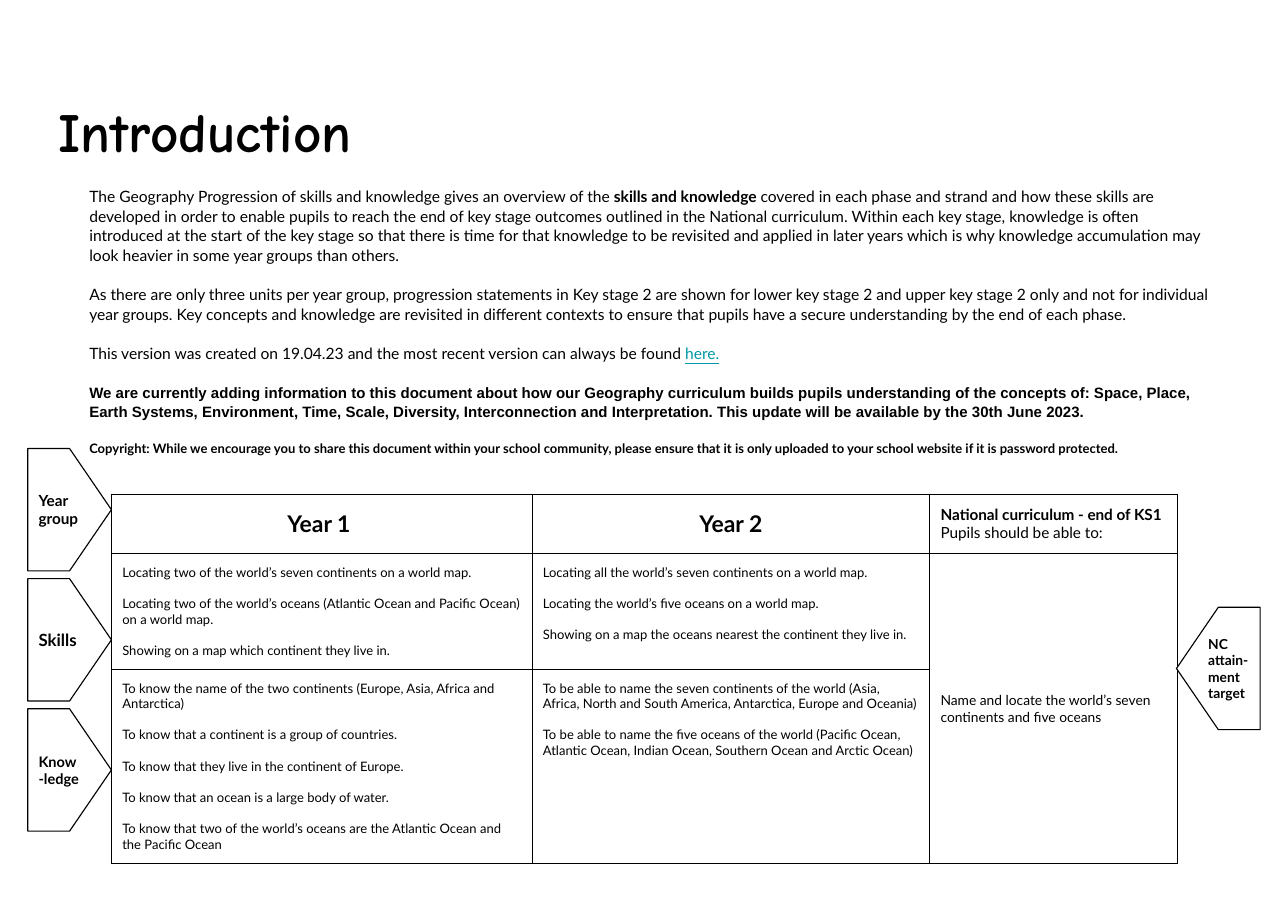
"""Builds the introduction slide of a geography skills and knowledge progression."""
from lxml import etree
from pptx import Presentation
from pptx.dml.color import RGBColor
from pptx.enum.shapes import MSO_SHAPE
from pptx.enum.text import MSO_ANCHOR, MSO_AUTO_SIZE, PP_ALIGN
from pptx.oxml.ns import qn
from pptx.util import Cm, Pt

PENTAGON = MSO_SHAPE.PENTAGON
TOP, MIDDLE = MSO_ANCHOR.TOP, MSO_ANCHOR.MIDDLE
LEFT, CENTER = PP_ALIGN.LEFT, PP_ALIGN.CENTER
NO_FIT = MSO_AUTO_SIZE.NONE
BLACK, WHITE, TEAL = "000000", "FFFFFF", "0097A7"
LINE_WIDTH = Pt(0.75)
LABEL_TOP, LABEL_PITCH = 10.34, 3
HEADER_SIZE, STATEMENT_SIZE, STATEMENT_GAP = 15, 8.5, 10.2

COLUMN_WIDTHS = [9.7, 9.17, 5.72]
ROW_HEIGHTS = [1.37, 2.67, 4.48]
YEARS = ["Year 1 ", "Year 2"]
SKILLS = [
    ["Locating two of the world’s seven continents on a world map.",
     "Locating two of the world’s oceans (Atlantic Ocean and Pacific Ocean) on a world map.",
     "Showing on a map which continent they live in."],
    ["Locating all the world’s seven continents on a world map.",
     "Locating the world’s five oceans on a world map.",
     "Showing on a map the oceans nearest the continent they live in."],
]
KNOWLEDGE = [
    ["To know the name of the two continents (Europe, Asia, Africa and Antarctica)",
     "To know that a continent is a group of countries.",
     "To know that they live in the continent of Europe.",
     "To know that an ocean is a large body of water.",
     "To know that two of the world’s oceans are the Atlantic Ocean and the Pacific Ocean"],
    ["To be able to name the seven continents of the world (Asia, Africa, North and South "
     "America, Antarctica, Europe and Oceania)",
     "To be able to name the five oceans of the world (Pacific Ocean, Atlantic Ocean, "
     "Indian Ocean, Southern Ocean and Arctic Ocean)"],
]
ROW_LABELS = [("Year group", 10), ("Skills", 11), ("Know-ledge", 9.5)]


def rgb(value):
    """Turn a hex string into a colour."""
    return RGBColor.from_string(value)


class SlideBuilder:
    """Holds the text style and the current slide."""

    def __init__(self, slide, font="Lato", color=BLACK):
        """Keep the slide and its default font and colour."""
        self.slide, self.font, self.color = slide, font, color

    def frame(self, frame, inset, anchor=TOP):
        """Prepare a text frame with equal insets."""
        frame.word_wrap, frame.auto_size = True, NO_FIT
        frame.vertical_anchor = anchor
        frame.margin_left = frame.margin_right = Cm(inset)
        frame.margin_top = frame.margin_bottom = Cm(inset)
        return frame

    def paragraph(self, frame, text, size, bold=False, font=None, align=LEFT, gap=0, spacing=1):
        """Write the next paragraph, with a gap above all but the first."""
        first = not frame.text
        paragraph = frame.paragraphs[0] if first else frame.add_paragraph()
        paragraph.text = text
        paragraph.alignment = align
        paragraph.line_spacing = spacing
        paragraph.space_before = Pt(0 if first else gap)
        paragraph.font.name = font or self.font
        paragraph.font.size = Pt(size)
        paragraph.font.bold = bold
        paragraph.font.color.rgb = rgb(self.color)
        return paragraph

    def title(self, text, left, top, width, height):
        """Place the title placeholder."""
        title = self.slide.shapes.title
        title.left, title.top, title.width, title.height = map(Cm, (left, top, width, height))
        self.paragraph(self.frame(title.text_frame, 0.33, MIDDLE), text, 36, True, "Comic Neue")

    def text_box(self, left, top, width, height):
        """Add a wrapping text box and return its frame."""
        box = self.slide.shapes.add_textbox(*map(Cm, (left, top, width, height)))
        return self.frame(box.text_frame, 0.33)

    def label(self, text, size, left, top, flipped=False):
        """Add a pentagon label that points at the table."""
        label = self.slide.shapes.add_shape(PENTAGON, *map(Cm, (left, top, 1.93, 2.82)))
        label.shadow.inherit = False
        label.fill.solid()
        label.fill.fore_color.rgb = rgb(WHITE)
        label.line.color.rgb = rgb(BLACK)
        label.line.width = LINE_WIDTH
        if flipped:
            label.element.spPr.get_or_add_xfrm().set("flipH", "1")
        self.paragraph(self.frame(label.text_frame, 0.25, MIDDLE), text, size, True)

    def table(self, left, top, widths, heights):
        """Add a white table with thin black borders."""
        table = self.slide.shapes.add_table(
            len(heights), len(widths), Cm(left), Cm(top), Cm(sum(widths)), Cm(sum(heights))).table
        table.first_row = table.horz_banding = False
        for column, width in zip(table.columns, widths):
            column.width = Cm(width)
        for row, height in zip(table.rows, heights):
            row.height = Cm(height)
            for cell in row.cells:
                self.cell_style(cell)
        return table

    def cell_style(self, cell):
        """Give a cell its borders, fill and insets."""
        properties = cell._tc.get_or_add_tcPr()
        for side in ("a:lnL", "a:lnR", "a:lnT", "a:lnB"):
            border = etree.SubElement(properties, qn(side), w=str(LINE_WIDTH))
            fill = etree.SubElement(border, qn("a:solidFill"))
            etree.SubElement(fill, qn("a:srgbClr"), val=BLACK)
        cell.fill.solid()
        cell.fill.fore_color.rgb = rgb(WHITE)
        cell.margin_left = cell.margin_right = Cm(0.25)
        cell.margin_top = cell.margin_bottom = Cm(0.25)

    def statements(self, cell, texts):
        """Fill a cell with spaced statements."""
        for text in texts:
            self.paragraph(cell.text_frame, text, STATEMENT_SIZE, gap=STATEMENT_GAP)


def add_overview(builder):
    """Write the introductory paragraphs."""
    overview = builder.text_box(1.73, 3.96, 26.57, 6.99)
    body = {"size": 10.2, "gap": 12.8, "spacing": 1.05}
    purpose = builder.paragraph(
        overview, "The Geography Progression of skills and knowledge gives an overview of the ", **body)
    emphasis = purpose.add_run()
    emphasis.text = "skills and knowledge "
    emphasis.font.bold = True
    purpose.add_run().text = (
        "covered in each phase and strand and how these skills are developed in order to enable "
        "pupils to reach the end of key stage outcomes outlined in the National curriculum. Within "
        "each key stage, knowledge is often introduced at the start of the key stage so that there "
        "is time for that knowledge to be revisited and applied in later years which is why "
        "knowledge accumulation may look heavier in some year groups than others.")
    builder.paragraph(
        overview,
        "As there are only three units per year group, progression statements in Key stage 2 are "
        "shown for lower key stage 2 and upper key stage 2 only and not for individual year groups. "
        "Key concepts and knowledge are revisited in different contexts to ensure that pupils have "
        "a secure understanding by the end of each phase.", **body)
    version = builder.paragraph(
        overview,
        "This version was created on 19.04.23 and the most recent version can always be found ", **body)
    here = version.add_run()
    here.text = "here."
    here.font.underline = True
    here.font.color.rgb = rgb(TEAL)
    builder.paragraph(
        overview,
        "We are currently adding information to this document about how our Geography curriculum "
        "builds pupils understanding of the concepts of: Space, Place, Earth Systems, Environment, "
        "Time, Scale, Diversity, Interconnection and Interpretation. This update will be available "
        "by the 30th June 2023.", **{**body, "size": 9.8}, bold=True, font="Arial")
    builder.paragraph(
        overview,
        "Copyright: While we encourage you to share this document within your school community, "
        "please ensure that it is only uploaded to your school website if it is password protected.",
        **{**body, "size": 8.5}, bold=True)


def add_progression(builder):
    """Fill the progression table."""
    table = builder.table(2.57, 11.39, COLUMN_WIDTHS, ROW_HEIGHTS)
    for column, (year, skills, knowledge) in enumerate(zip(YEARS, SKILLS, KNOWLEDGE)):
        header = table.cell(0, column)
        header.vertical_anchor = MIDDLE
        header.margin_top = header.margin_bottom = Cm(0.18)
        builder.paragraph(header.text_frame, year, HEADER_SIZE, True, align=CENTER)
        builder.statements(table.cell(1, column), skills)
        builder.statements(table.cell(2, column), knowledge)
    curriculum = table.cell(0, 2).text_frame
    builder.paragraph(curriculum, "National curriculum - end of KS1", 10, True)
    builder.paragraph(curriculum, "Pupils should be able to:", 10)
    target = table.cell(1, 2)
    target.merge(table.cell(2, 2))
    target.vertical_anchor = MIDDLE
    builder.paragraph(
        target.text_frame, "Name and locate the world’s seven continents and five oceans", 9)


def main():
    """Build and save the slide."""
    deck = Presentation()
    deck.slide_width, deck.slide_height = Cm(29.7), Cm(21)
    builder = SlideBuilder(deck.slides.add_slide(deck.slide_layouts[5]))
    builder.title("Introduction", 1.02, 1.83, 27.69, 2.34)
    add_overview(builder)
    add_progression(builder)
    for index, (text, size) in enumerate(ROW_LABELS):
        builder.label(text, size, 0.64, LABEL_TOP + index * LABEL_PITCH)
    builder.label("NC attain-ment target", 9, 27.13, 14, flipped=True)
    deck.save("out.pptx")


if __name__ == "__main__":
    main()
